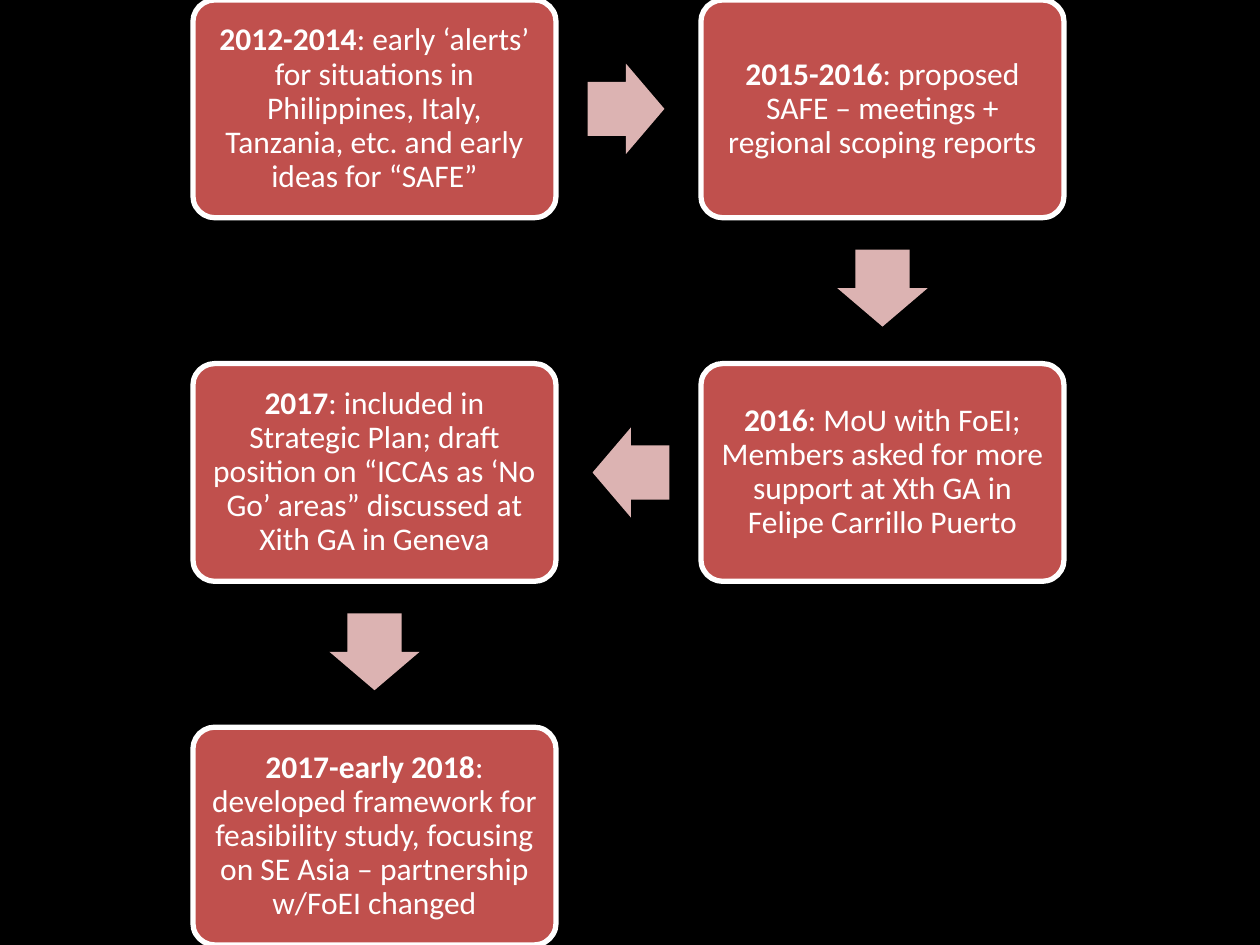
from itertools import pairwise
from math import atan2, cos, degrees, sin

from pptx import Presentation
from pptx import util as u
from pptx.dml import color
from pptx.enum import shapes, text

LEFT, WIDE, HIGH = 3.89, 7.32, 4.39
STEP_X, STEP_Y = 10.24, 7.33
STEPS = [
    (0, 0, "2012-2014", ": early ‘alerts’ for situations in Philippines, Italy, "
     "Tanzania, etc. and early ideas for “SAFE”"),
    (1, 0, "2015-2016", ": proposed SAFE – meetings + regional scoping reports"),
    (1, 1, "2016", ": MoU with FoEI; Members asked for more support at Xth GA in "
     "Felipe Carrillo Puerto"),
    (0, 1, "2017", ": included in Strategic Plan; draft position on “ICCAs as "
     "‘No Go’ areas” discussed at Xith GA in Geneva"),
    (0, 2, "2017-early 2018", ": developed framework for feasibility study, "
     "focusing on SE Asia – partnership w/FoEI changed"),
]


def paint(form, code):
    form.rgb = color.RGBColor.from_string(code)


def center(col, row):
    return LEFT + WIDE / 2 + col * STEP_X, HIGH / 2 + row * STEP_Y


class Flow:
    font, size = "Calibri", 18
    back, card, edge, hint = "000000", "C0504D", "FFFFFF", "DCB3B2"

    def __init__(self, slide):
        self.slide = slide
        slide.background.fill.solid()
        paint(slide.background.fill.fore_color, self.back)

    def shape(self, kind, mid, wide, high, fill, *ratios):
        item = self.slide.shapes.add_shape(
            kind, u.Cm(mid[0] - wide / 2), u.Cm(mid[1] - high / 2),
            u.Cm(wide), u.Cm(high))
        item.shadow.inherit = False
        item.fill.solid()
        paint(item.fill.fore_color, fill)
        for spot, ratio in enumerate(ratios):
            item.adjustments[spot] = ratio
        return item

    def box(self, mid, date, note):
        item = self.shape(shapes.MSO_SHAPE.ROUNDED_RECTANGLE, mid, WIDE, HIGH,
                          self.card, 0.1)
        item.line.width = u.Pt(3)
        paint(item.line.color, self.edge)
        frame = item.text_frame
        frame.word_wrap = True
        frame.vertical_anchor = text.MSO_ANCHOR.MIDDLE
        frame.margin_left = frame.margin_right = u.Cm(0.18)
        frame.margin_top = frame.margin_bottom = u.Cm(0.18)
        para = frame.paragraphs[0]
        para.alignment = text.PP_ALIGN.CENTER
        para.line_spacing = 0.9
        for words, bold in ((date, True), (note, False)):
            run = para.add_run()
            run.text = words
            run.font.name = self.font
            run.font.size = u.Pt(self.size)
            run.font.bold = bold
            paint(run.font.color, self.edge)

    def arrow(self, start, end):
        turn = atan2(end[1] - start[1], end[0] - start[0])
        mid = ((start[0] + end[0]) / 2 - 0.05 * cos(turn),
               (start[1] + end[1]) / 2 - 0.05 * sin(turn))
        item = self.shape(shapes.MSO_SHAPE.RIGHT_ARROW, mid, 1.55, 1.82,
                          self.hint, 0.6, 0.5)
        item.line.fill.background()
        item.rotation = degrees(turn)


def main():
    deck = Presentation()
    deck.slide_width, deck.slide_height = u.Cm(25.4), u.Cm(19.05)
    flow = Flow(deck.slides.add_slide(deck.slide_layouts[6]))
    for col, row, date, note in STEPS:
        flow.box(center(col, row), date, note)
    for start, end in pairwise(STEPS):
        flow.arrow(center(*start[:2]), center(*end[:2]))
    deck.save("out.pptx")


if __name__ == "__main__":
    main()
